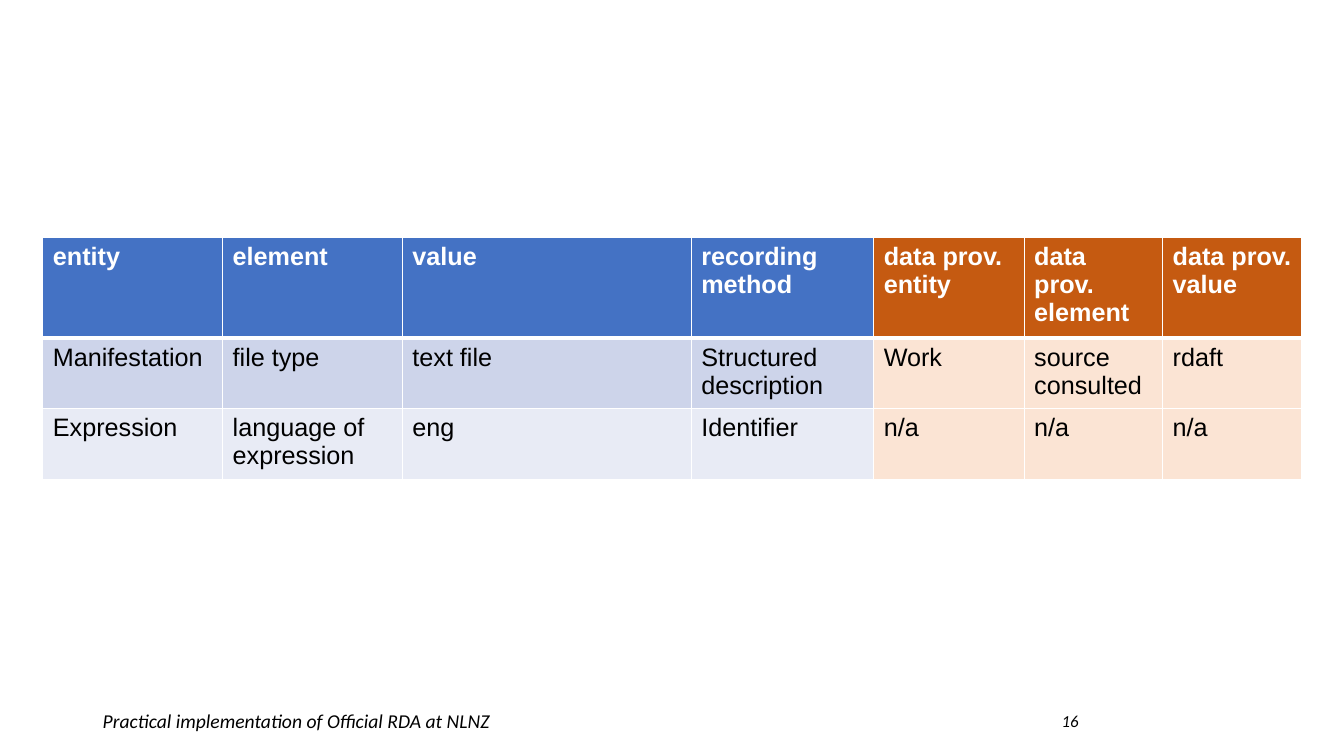
"""Build a slide with a table of metadata values and their data provenance."""
import pptx
import pptx.dml.color
import pptx.enum.text
import pptx.oxml
import pptx.oxml.ns
import pptx.util
from pptx.util import Cm

RGBColor = pptx.dml.color.RGBColor
WHITE = RGBColor(0xFF, 0xFF, 0xFF)
BLACK = RGBColor(0x00, 0x00, 0x00)
BLUE = RGBColor(0x44, 0x72, 0xC4)
BLUE_MEDIUM = RGBColor(0xCD, 0xD4, 0xEA)
BLUE_PALE = RGBColor(0xE8, 0xEB, 0xF5)
ORANGE = RGBColor(0xC5, 0x5A, 0x11)
ORANGE_PALE = RGBColor(0xFB, 0xE4, 0xD4)

ROWS = [
    ["entity", "element", "value", "recording method",
     "data prov. entity", "data prov. element", "data prov. value"],
    ["Manifestation", "file type", "text file", "Structured description",
     "Work", "source consulted", "rdaft"],
    ["Expression", "language of expression", "eng", "Identifier",
     "n/a", "n/a", "n/a"],
]
COLUMN_WIDTHS = [4.53, 4.53, 7.28, 4.6, 3.79, 3.49, 3.5]
ROW_HEIGHTS = [2.54, 1.78, 1.78]
ROW_FILLS = [(BLUE, ORANGE), (BLUE_MEDIUM, ORANGE_PALE), (BLUE_PALE, ORANGE_PALE)]
FIRST_PROVENANCE_COLUMN = 4


def add_border(cell, side, points):
    """Draw a white line on one side of a table cell."""
    line = pptx.oxml.parse_xml(
        f'<a:ln{side} {pptx.oxml.ns.nsdecls("a")} w="{pptx.util.Pt(points)}">'
        f'<a:solidFill><a:srgbClr val="{WHITE}"/></a:solidFill></a:ln{side}>')
    cell._tc.get_or_add_tcPr().append(line)


def add_footer_text(text, left, top, width, height, size):
    """Add an italic footer text box and return its shape."""
    shape = slide.shapes.add_textbox(Cm(left), Cm(top), Cm(width), Cm(height))
    shape.text_frame.word_wrap = True
    paragraph = shape.text_frame.paragraphs[0]
    paragraph.text = text
    paragraph.font.name = "Calibri"
    paragraph.font.size = pptx.util.Pt(size)
    paragraph.font.italic = True
    paragraph.font.color.rgb = BLACK
    return shape


presentation = pptx.Presentation()
presentation.slide_width = Cm(33.87)
presentation.slide_height = Cm(19.05)
slide = presentation.slides.add_slide(presentation.slide_layouts[6])

add_footer_text("Practical implementation of Official RDA at NLNZ",
                2.34, 17.73, 15.37, 0.86, 14)
slide_number = add_footer_text("16", 23.93, 17.65, 3.5, 1.02, 12)
slide_number.text_frame.vertical_anchor = pptx.enum.text.MSO_ANCHOR.MIDDLE
slide_number.text_frame.paragraphs[0].alignment = pptx.enum.text.PP_ALIGN.RIGHT

table = slide.shapes.add_table(
    len(ROWS), len(COLUMN_WIDTHS), Cm(1.08), Cm(5.98),
    Cm(sum(COLUMN_WIDTHS)), Cm(sum(ROW_HEIGHTS))).table
for column, width in zip(table.columns, COLUMN_WIDTHS):
    column.width = Cm(width)

for row_index, texts in enumerate(ROWS):
    table.rows[row_index].height = Cm(ROW_HEIGHTS[row_index])
    is_header = row_index == 0
    for column_index, text in enumerate(texts):
        cell = table.cell(row_index, column_index)
        add_border(cell, "L", 1)
        add_border(cell, "R", 1)
        add_border(cell, "T", 3 if row_index == 1 else 1)
        add_border(cell, "B", 3 if is_header else 1)
        cell.fill.solid()
        is_provenance = column_index >= FIRST_PROVENANCE_COLUMN
        cell.fill.fore_color.rgb = ROW_FILLS[row_index][is_provenance]
        cell.text = text
        paragraph = cell.text_frame.paragraphs[0]
        paragraph.font.name = "Arial"
        paragraph.font.size = pptx.util.Pt(18)
        paragraph.font.bold = is_header
        paragraph.font.color.rgb = WHITE if is_header else BLACK

presentation.save("out.pptx")
